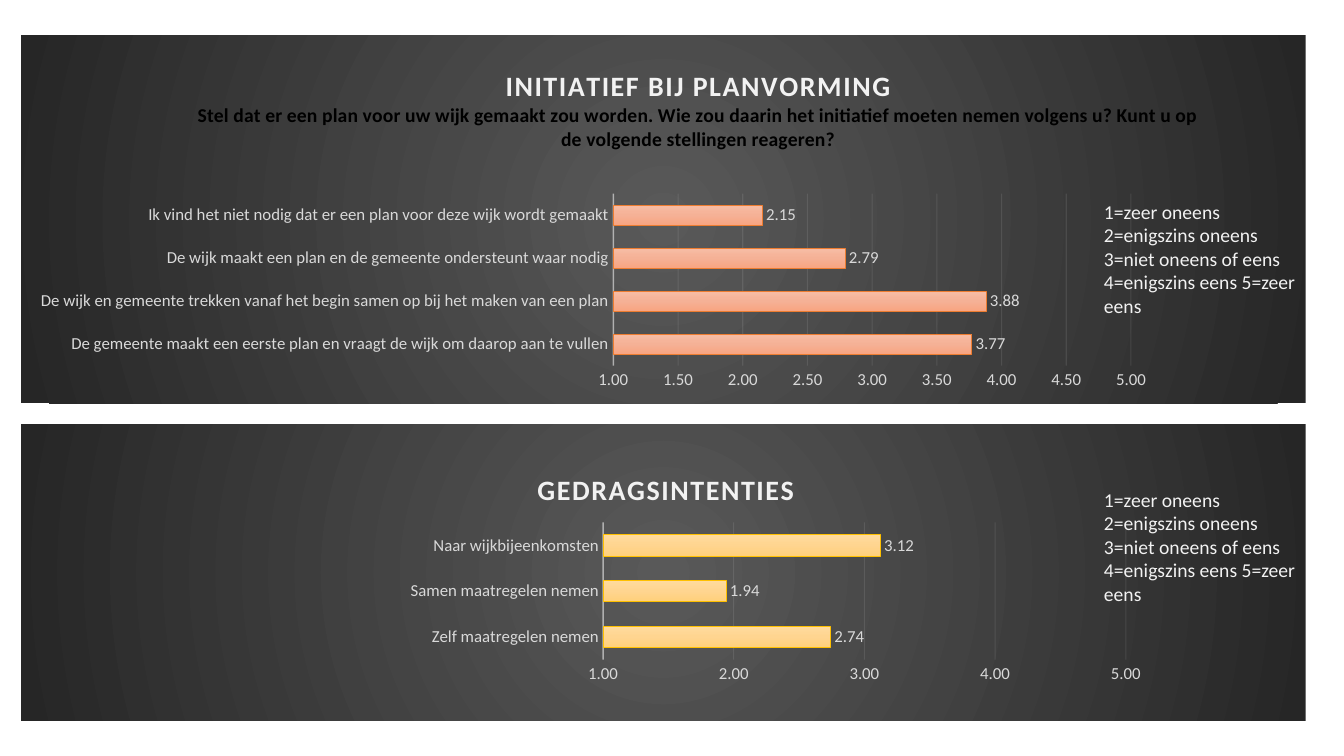
from lxml import etree
from pptx import Presentation
from pptx.chart.data import CategoryChartData
from pptx.dml.color import RGBColor
from pptx.enum.chart import XL_CHART_TYPE, XL_LABEL_POSITION, XL_TICK_MARK
from pptx.enum.text import MSO_AUTO_SIZE, PP_ALIGN
from pptx.oxml import parse_xml
from pptx.oxml.ns import nsdecls, qn
from pptx.util import Inches, Pt

BARS = XL_CHART_TYPE.BAR_CLUSTERED
OUT = XL_LABEL_POSITION.OUTSIDE_END
NONE = XL_TICK_MARK.NONE
MID = PP_ALIGN.CENTER
GROW = MSO_AUTO_SIZE.SHAPE_TO_FIT_TEXT

SCALE = "1=zeer oneens 2=enigszins oneens 3=niet oneens of eens 4=enigszins eens 5=zeer eens"
GLOW = '<a:path path="circle"><a:fillToRect l="50000" t="50000" r="50000" b="50000"/></a:path>'
DOWN = '<a:lin ang="5400000" scaled="0"/>'


def tint(code):
    return RGBColor.from_string(code)


def blend(codes, way):
    step = 100000 // (len(codes) - 1)
    stops = "".join(
        f'<a:gs pos="{i * step}"><a:srgbClr val="{tint(code)}"/></a:gs>'
        for i, code in enumerate(codes)
    )
    return parse_xml(
        f'<a:gradFill {nsdecls("a")} rotWithShape="1"><a:gsLst>{stops}</a:gsLst>{way}</a:gradFill>'
    )


def place(node, spot, index, inner=False):
    old = node.find(qn("c:layout"))
    if old is not None:
        node.remove(old)
    target = '<c:layoutTarget val="inner"/>' if inner else ""
    keys = ("x", "y", "w", "h")[:len(spot)]
    modes = "".join(f'<c:{key}Mode val="edge"/>' for key in keys[:2])
    sizes = "".join(f'<c:{key} val="{part / 100:.3f}"/>' for key, part in zip(keys, spot))
    node.insert(index, parse_xml(
        f'<c:layout {nsdecls("c")}><c:manualLayout>{target}{modes}{sizes}</c:manualLayout></c:layout>'
    ))


class Board:
    face = "Calibri"
    pale = "F2F2F2"
    soft = "D9D9D9"
    dark = ("595959", "262626")

    def __init__(self, deck):
        self.deck = deck
        self.slide = deck.slides.add_slide(deck.slide_layouts[6])

    def box(self, left, top, width, height):
        wide, high = self.deck.slide_width, self.deck.slide_height
        return [int(part * full / 100) for part, full in
                ((left, wide), (top, high), (width, wide), (height, high))]

    def type(self, font, size, code, bold=False):
        font.name, font.size, font.bold = self.face, Pt(size), bold
        font.color.rgb = tint(code)

    def rule(self, line, width, share):
        line.width = Pt(width)
        line.color.rgb = tint(self.pale)
        color = line._get_or_add_ln().find(".//" + qn("a:srgbClr"))
        etree.SubElement(color, qn("a:alpha")).set("val", str(share * 1000))

    def note(self, spot):
        shape = self.slide.shapes.add_textbox(*self.box(*spot))
        frame = shape.text_frame
        frame.word_wrap = True
        frame.auto_size = GROW
        run = frame.paragraphs[0].add_run()
        run.text = SCALE
        self.type(run.font, 14, self.pale)

    def title(self, chart, lines, spot):
        title = chart.chart_title
        frame = title.text_frame
        for i, (text, size, code, space) in enumerate(lines):
            para = frame.add_paragraph() if i else frame.paragraphs[0]
            para.alignment = MID
            run = para.add_run()
            run.text = text
            self.type(run.font, size, code, True)
            run.font._element.set("spc", str(space))
        place(title._element, spot, 1)

    def axes(self, chart, step):
        cats, vals = chart.category_axis, chart.value_axis
        for axis in (cats, vals):
            axis.major_tick_mark = axis.minor_tick_mark = NONE
            self.type(axis.tick_labels.font, 12, self.soft)
        cats.has_major_gridlines = False
        self.rule(cats.format.line, 1, 54)
        vals.minimum_scale, vals.maximum_scale, vals.major_unit = 1, 5, step
        vals.tick_labels.number_format = "0.00"
        vals.tick_labels.number_format_is_linked = False
        vals.format.line.fill.background()
        vals.has_major_gridlines = True
        self.rule(vals.major_gridlines.format.line, 0.75, 10)

    def bars(self, chart, codes, edge):
        plot = chart.plots[0]
        plot.gap_width, plot.overlap, plot.vary_by_categories = 115, -20, False
        series = plot.series[0]
        series.format.line.color.rgb = tint(edge)
        series.format.line.width = Pt(0.5)
        series._element.get_or_add_spPr().insert(0, blend(codes, DOWN))
        labels = series.data_labels
        labels.show_value = True
        labels.position = OUT
        labels.number_format = "0.00"
        labels.number_format_is_linked = False
        self.type(labels.font, 12, self.soft)

    def chart(self, spot, rows, lines, head, plot, step, codes, edge):
        data = CategoryChartData(number_format="0.00")
        data.categories = [name for name, _ in rows]
        data.add_series("Series 1", [value for _, value in rows])
        chart = self.slide.shapes.add_chart(BARS, *self.box(*spot), data).chart
        chart.has_legend = False
        self.type(chart.font, 10, "000000")
        self.title(chart, lines, head)
        self.axes(chart, step)
        self.bars(chart, codes, edge)
        space = chart._chartSpace
        place(space.find(".//" + qn("c:plotArea")), plot, 0, True)
        back = parse_xml(f'<c:spPr {nsdecls("c", "a")}><a:ln><a:noFill/></a:ln></c:spPr>')
        back.insert(0, blend(self.dark, GLOW))
        space.find(qn("c:txPr")).addprevious(back)


def main():
    deck = Presentation()
    deck.slide_width, deck.slide_height = Inches(13.33), Inches(7.5)
    board = Board(deck)
    board.chart(
        (1.58, 4.67, 95.57, 48.67),
        [("De gemeente maakt een eerste plan en vraagt de wijk om daarop aan te vullen", 3.77),
         ("De wijk en gemeente trekken vanaf het begin samen op bij het maken van een plan", 3.88),
         ("De wijk maakt een plan en de gemeente ondersteunt waar nodig", 2.79),
         ("Ik vind het niet nodig dat er een plan voor deze wijk wordt gemaakt", 2.15)],
        [("INITIATIEF BIJ PLANVORMING", 20, board.pale, 100),
         ("Stel dat er een plan voor uw wijk gemaakt zou worden. Wie zou daarin het initiatief "
          "moeten nemen volgens u? Kunt u op de volgende stellingen reageren?", 14, "000000", 0)],
        (13.5, 7.8), (46.1, 43, 40.3, 46.8), 0.5,
        ("F7BDA5", "F5B196", "F8A582"), "ED7D31",
    )
    board.chart(
        (1.58, 56.13, 95.57, 39.2),
        [("Zelf maatregelen nemen", 2.74),
         ("Samen maatregelen nemen", 1.94),
         ("Naar wijkbijeenkomsten", 3.12)],
        [("GEDRAGSINTENTIES", 20, board.pale, 100)],
        (39.8, 13.8), (45.3, 33.1, 40.7, 46.3), 1,
        ("FFDB9E", "FFD590", "FFD07C"), "FFC000",
    )
    for top in (25.73, 63.87):
        board.note((81.4, top, 15.75, 17.07))
    deck.save("out.pptx")


if __name__ == "__main__":
    main()
